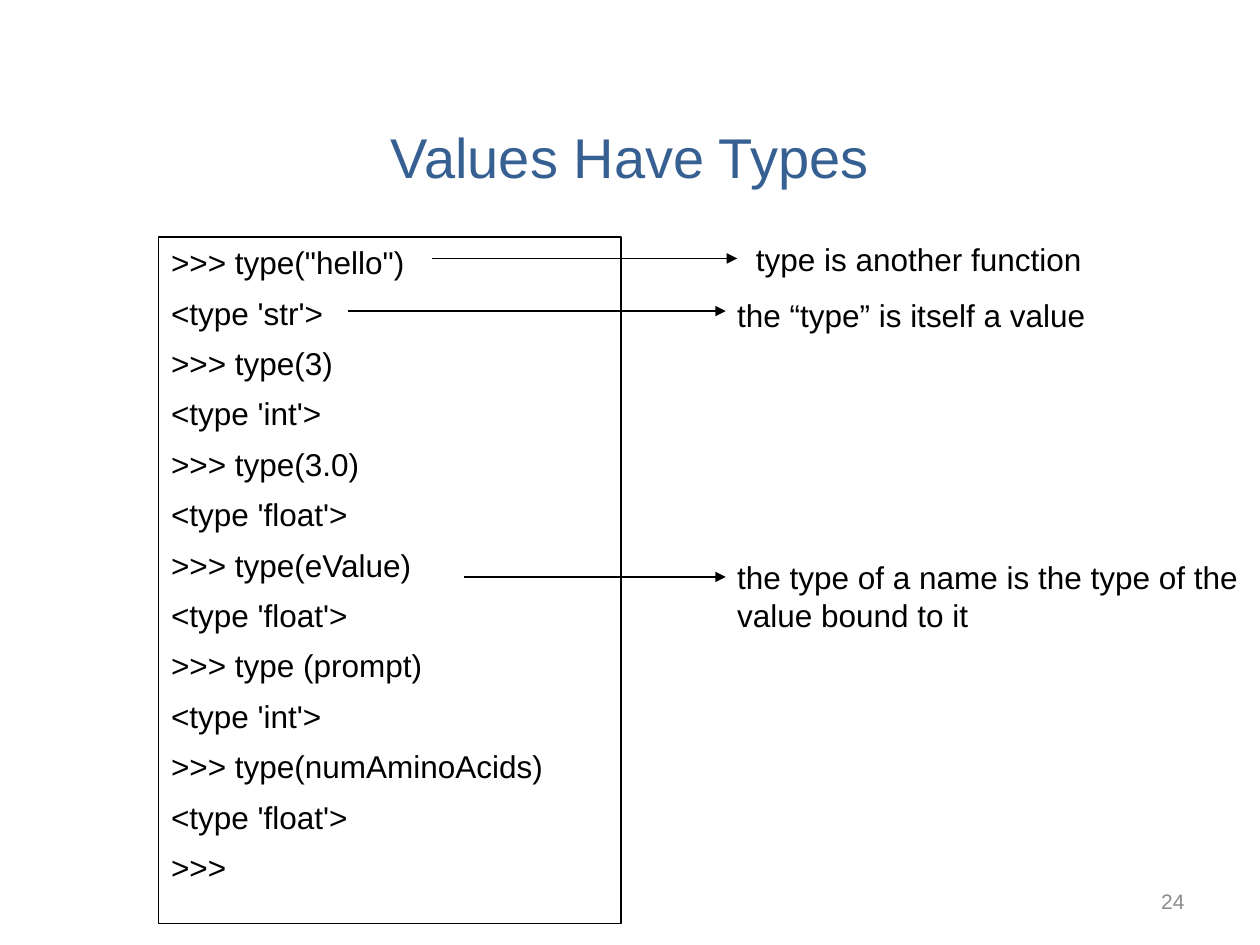
import pptx
import pptx.util
import pptx.dml.color
import pptx.enum.shapes
import pptx.enum.text
import lxml.etree
from dataclasses import dataclass

Cm = pptx.util.Cm
Pt = pptx.util.Pt
ALIGN = pptx.enum.text.PP_ALIGN
ANCHOR = pptx.enum.text.MSO_ANCHOR


@dataclass(frozen=True)
class Theme:
    font: str = "Arial"
    black: str = "000000"
    blue: str = "376092"
    grey: str = "8C8C8C"
    head: int = 32
    body: int = 18
    small: int = 12
    line: float = 0.75
    gap: float = 7.2


THEME = Theme()

CODE = """>>> type("hello")
<type 'str'>
>>> type(3)
<type 'int'>
>>> type(3.0)
<type 'float'>
>>> type(eValue)
<type 'float'>
>>> type (prompt)
<type 'int'>
>>> type(numAminoAcids)
<type 'float'>
>>>"""

# Text, left, top, width, height in cm
NOTES = [
    ("type is another function", 14.99, 4.72, 7.2, 0.97),
    ("the “type” is itself a value", 14.61, 5.84, 7.6, 0.97),
    ("the type of a name is the type of the\nvalue bound to it",
     14.61, 11.13, 10.75, 1.8),
]

# Start x, end x, y in cm
ARROWS = [(8.71, 14.86, 5.21), (7.01, 14.63, 6.27), (9.35, 14.63, 11.63)]


def rgb(code):
    return pptx.dml.color.RGBColor.from_string(code)


def write(shape, text, size, color, align=ALIGN.LEFT, anchor=ANCHOR.TOP,
          wrap=True, gap=0):
    frame = shape.text_frame
    frame.text = text
    frame.word_wrap = wrap
    frame.vertical_anchor = anchor
    for par in frame.paragraphs:
        par.alignment = align
        par.space_after = Pt(gap)
        for run in par.runs:
            run.font.name = THEME.font
            run.font.size = Pt(size)
            run.font.color.rgb = rgb(color)


def add_text(slide, text, left, top, width, height, size=THEME.body,
             color=THEME.black, **style):
    box = slide.shapes.add_textbox(Cm(left), Cm(top), Cm(width), Cm(height))
    write(box, text, size, color, **style)
    return box


def add_note(slide, text, *place):
    box = add_text(slide, text, *place, wrap=False)
    box.text_frame.auto_size = pptx.enum.text.MSO_AUTO_SIZE.SHAPE_TO_FIT_TEXT


def add_code(slide, text, left, top, width, height):
    box = slide.shapes.add_shape(
        pptx.enum.shapes.MSO_SHAPE.RECTANGLE,
        Cm(left), Cm(top), Cm(width), Cm(height))
    box.shadow.inherit = False
    box.fill.background()
    box.line.color.rgb = rgb(THEME.black)
    box.line.width = Pt(THEME.line)
    write(box, text, THEME.body, THEME.black, gap=THEME.gap)


def add_arrow(slide, start, end, y):
    arrow = slide.shapes.add_connector(
        pptx.enum.shapes.MSO_CONNECTOR.STRAIGHT,
        Cm(start), Cm(y), Cm(end), Cm(y))
    arrow.line.color.rgb = rgb(THEME.black)
    arrow.line.width = Pt(THEME.line)
    qn = pptx.oxml.ns.qn
    props = arrow.element.spPr
    tip = lxml.etree.SubElement(props.find(qn("a:ln")), qn("a:tailEnd"))
    tip.set("type", "triangle")
    lxml.etree.SubElement(props, qn("a:effectLst"))


def main():
    deck = pptx.Presentation()
    deck.slide_width, deck.slide_height = Cm(25.4), Cm(19.05)
    slide = deck.slides.add_slide(deck.slide_layouts[6])

    # Title and page number
    add_text(slide, "Values Have Types", 1.27, 2.34, 22.86, 2.46,
             THEME.head, THEME.blue, align=ALIGN.CENTER)
    add_text(slide, "24", 18.21, 17.65, 5.92, 1.02,
             THEME.small, THEME.grey, align=ALIGN.RIGHT, anchor=ANCHOR.MIDDLE)

    # Code session
    add_code(slide, CODE, 3.2, 4.78, 9.32, 13.84)

    # Arrows and the notes they lead to
    for arrow in ARROWS:
        add_arrow(slide, *arrow)
    for note in NOTES:
        add_note(slide, *note)

    deck.save("out.pptx")


if __name__ == "__main__":
    main()
